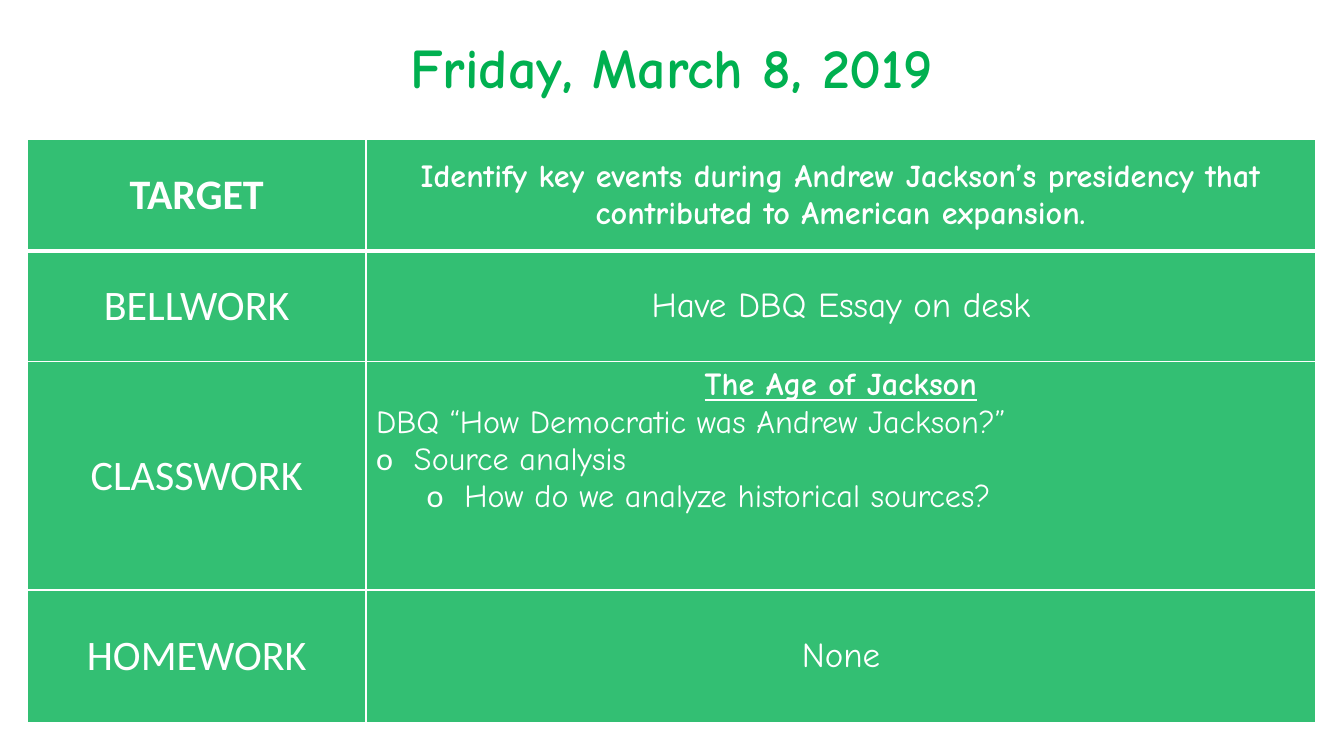
from dataclasses import dataclass

from lxml.etree import SubElement as Sub
from pptx import Presentation
from pptx.dml.color import RGBColor as RGB
from pptx.enum.shapes import MSO_SHAPE as Shape
from pptx.enum.text import MSO_ANCHOR as Anchor, PP_ALIGN as Align
from pptx.oxml import parse_xml
from pptx.oxml.ns import nsdecls, qn
from pptx.util import Pt


@dataclass(frozen=True)
class Theme:
    green: RGB = RGB.from_string("00B050")
    white: RGB = RGB.from_string("FFFFFF")
    label: str = "Calibri"
    hand: str = "Comic Neue"
    title: int = 40
    head: int = 30
    note: int = 25
    list: int = 23
    thin: int = 1
    thick: int = 3
    cell: int = 80
    band: int = 65


THEME = Theme()
COLS = (242, 678.5)
ROWS = (80, 79, 163, 95)
STEP = 27  # bullet hang

# Each line: text, bold, underline, alignment, left margin (None for no bullet)
TARGET = ("Identify key events during Andrew Jackson’s presidency "
          "that contributed to American expansion.")
CLASS = [
    ("The Age of Jackson", True, True, Align.CENTER, None),
    ("DBQ “How Democratic was Andrew Jackson?”", False, False, Align.LEFT, None),
    ("Source analysis", False, False, Align.LEFT, STEP),
    ("How do we analyze historical sources?", False, False, Align.LEFT, STEP + 36),
]


def mid(text, bold=False):
    """Give the line list of one centred paragraph."""
    return [(text, bold, False, Align.CENTER, None)]


AGENDA = [
    ("TARGET", mid(TARGET, True), THEME.list, Anchor.MIDDLE),
    ("BELLWORK", mid("Have DBQ Essay on desk"), THEME.note, Anchor.MIDDLE),
    ("CLASSWORK", CLASS, THEME.list, Anchor.TOP),
    ("HOMEWORK", mid("None"), THEME.note, Anchor.MIDDLE),
]


def tint(fill, node, color, alpha):
    """Fill with a colour that is alpha percent opaque."""
    fill.solid()
    fill.fore_color.rgb = color
    solid = node.find(qn("a:solidFill"))
    Sub(solid[0], qn("a:alpha"), val=str(alpha * 1000))


def bullet(para, left):
    props = para._p.get_or_add_pPr()
    props.set("marL", str(Pt(left)))
    props.set("indent", str(-Pt(STEP)))
    Sub(props, qn("a:buFont"), typeface=THEME.label)
    Sub(props, qn("a:buChar"), char="o")


def write(frame, lines, name, size, color):
    for i, (text, bold, under, align, left) in enumerate(lines):
        para = frame.paragraphs[0] if i == 0 else frame.add_paragraph()
        para.alignment = align
        if left is not None:
            para.level = int(left > STEP)
            bullet(para, left)
        run = para.add_run()
        run.text = text
        look = {"name": name, "size": Pt(size), "bold": bold, "underline": under}
        for key, value in look.items():
            setattr(run.font, key, value)
        run.font.color.rgb = color


def edge(cell, top, base):
    """Draw the four borders of a cell, with its top and base widths."""
    props = cell._tc.get_or_add_tcPr()
    sides = {"L": THEME.thin, "R": THEME.thin, "T": top, "B": base}
    for i, (side, width) in enumerate(sides.items()):
        props.insert(i, parse_xml(
            f'<a:ln{side} {nsdecls("a")} w="{Pt(width)}"><a:solidFill>'
            f'<a:srgbClr val="{THEME.white}"/></a:solidFill></a:ln{side}>'))


def agenda(slide, left, top):
    grid = slide.shapes.add_table(len(ROWS), len(COLS), Pt(left), Pt(top),
                                  Pt(sum(COLS)), Pt(sum(ROWS))).table
    grid.first_row = grid.horz_banding = False
    for col, width in zip(grid.columns, COLS):
        col.width = Pt(width)
    for i, (label, lines, size, anchor) in enumerate(AGENDA):
        grid.rows[i].height = Pt(ROWS[i])
        parts = [
            (mid(label, i == 0), THEME.label, THEME.head, Anchor.MIDDLE),
            (lines, THEME.hand, size, anchor),
        ]
        for cell, (body, name, points, place) in zip(grid.rows[i].cells, parts):
            write(cell.text_frame, body, name, points, THEME.white)
            cell.vertical_anchor = place
            tint(cell.fill, cell._tc.get_or_add_tcPr(), THEME.green, THEME.cell)
            edge(cell, THEME.thick if i == 1 else THEME.thin,
                 THEME.thick if i == 0 else THEME.thin)


def title(slide, left, top, width, height):
    band = slide.shapes.add_shape(Shape.RECTANGLE, Pt(left), Pt(top),
                                  Pt(width), Pt(height))
    band.shadow.inherit = False
    tint(band.fill, band._element.spPr, THEME.white, THEME.band)
    band.line.fill.background()
    frame = band.text_frame
    frame.word_wrap = True
    frame.vertical_anchor = Anchor.MIDDLE
    write(frame, mid("Friday, March 8, 2019", True), THEME.hand,
          THEME.title, THEME.green)


def main():
    deck = Presentation()
    deck.slide_width, deck.slide_height = Pt(960), Pt(540)
    slide = deck.slides.add_slide(deck.slide_layouts[6])
    left = 19.5
    agenda(slide, left, 99.5)
    title(slide, left, 11.5, sum(COLS), 72)
    deck.save("out.pptx")


if __name__ == "__main__":
    main()
